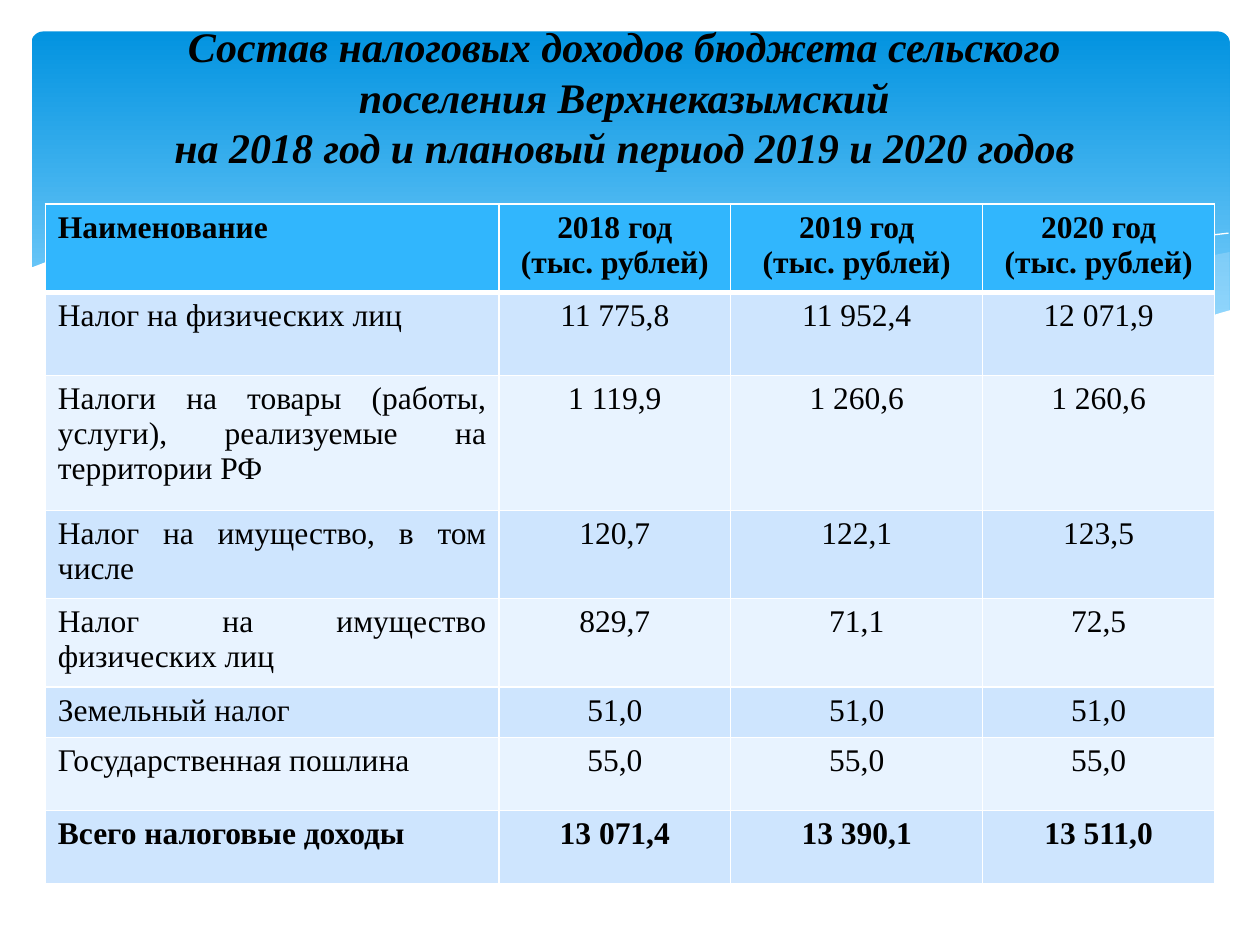
from itertools import chain
from pptx import Presentation
from pptx.util import Inches, Pt
from pptx.dml.color import RGBColor as RGB
from pptx.enum.shapes import MSO_SHAPE as SHAPE
from pptx.enum.text import PP_ALIGN as ALIGN, MSO_ANCHOR as ANCHOR
from pptx.oxml.ns import qn
from lxml.etree import SubElement as Sub

BLACK = RGB(0, 0, 0)
WHITE = RGB(255, 255, 255)
DEEP = RGB(0x02, 0x93, 0xE0)
SKY = RGB(0x83, 0xD3, 0xFE)
MIST = RGB(0xC6, 0xE7, 0xFC)
HEAD = RGB(0x31, 0xB6, 0xFD)
BANDS = (RGB(0xCE, 0xE5, 0xFE), RGB(0xE8, 0xF3, 0xFF))
FONT = "Times New Roman"
STEPS = 8  # line segments between two knots of a curve

# Each edge is a smooth curve through a few knots, in inches
RIGHT_TOP = [(9.76, 2), (8.61, 2.23), (7.53, 2.48), (6.61, 2.65)]
RIGHT_LOW = [(6.61, 2.65), (7.57, 2.76), (8.54, 2.76), (9.76, 2.47)]
MID_TOP = [(8.93, 2.73), (7.41, 2.47), (6.29, 2.22), (4.89, 1.94),
           (3.8, 1.85), (2.86, 1.91)]
MID_LOW = [(2.86, 1.91), (4.49, 2.22), (6.01, 2.55), (7.48, 2.76), (8.93, 2.73)]
CREST = [(3.09, 1.95), (4.16, 1.87), (5.56, 1.97), (7.27, 2.26), (9.07, 2.72)]
RISE = [(6.13, 2.57), (7.48, 2.23), (8.66, 1.99), (9.75, 1.85)]
FRONT_TOP = [(0.23, 2.13), (0.85, 1.93), (1.77, 1.84), (3.16, 1.94),
             (4.47, 2.2), (6.03, 2.54), (7.78, 2.76), (8.75, 2.73), (9.77, 2.46)]
FLOOR = [(9.77, 3.29), (0.23, 3.29)]

TITLE = ("Состав налоговых доходов бюджета сельского",
         "поселения Верхнеказымский",
         "на 2018 год и плановый период 2019 и 2020 годов")
UNIT = "(тыс. рублей)"
ROWS = [
    ("Наименование", *(f"{year} год\n{UNIT}" for year in (2018, 2019, 2020))),
    ("Налог на физических лиц", "11 775,8", "11 952,4", "12 071,9"),
    ("Налоги на товары (работы, услуги), реализуемые на территории РФ",
     "1 119,9", "1 260,6", "1 260,6"),
    ("Налог на имущество, в том числе", "120,7", "122,1", "123,5"),
    ("Налог на имущество физических лиц", "829,7", "71,1", "72,5"),
    ("Земельный налог", "51,0", "51,0", "51,0"),
    ("Государственная пошлина", "55,0", "55,0", "55,0"),
    ("Всего налоговые доходы", "13 071,4", "13 390,1", "13 511,0"),
]
WIDTHS = (3.6, 1.84, 2, 1.84)
HEIGHTS = (0.69, 0.66, 1.07, 0.69, 0.69, 0.39, 0.58, 0.58)


def style(para, size, align, bold, italic=False):
    para.alignment = align
    for run in para.runs:
        font = run.font
        font.name, font.size = FONT, Pt(size)
        font.bold, font.italic = bold, italic
        font.color.rgb = BLACK


def blend(a, b, c, d, t):
    """Catmull-Rom value at t between b and c, with neighbours a and d."""
    return b + t / 2 * (c - a + t * (2 * a - 5 * b + 4 * c - d
                                     + t * (3 * (b - c) + d - a)))


def curve(knots):
    """Points of a smooth curve that passes through all the knots."""
    ends = [knots[0], *knots, knots[-1]]
    points = [knots[0]]
    for near in zip(ends, ends[1:], ends[2:], ends[3:]):
        xs, ys = zip(*near)
        points += [(blend(*xs, i / STEPS), blend(*ys, i / STEPS))
                   for i in range(1, STEPS + 1)]
    return points


def trace(slide, box, edges, closed):
    """Join the edges into one outline inside the box."""
    left, top = box[:2]
    points = chain.from_iterable(curve(edge) for edge in edges)
    spots = [(left + Inches(x), top + Inches(y)) for x, y in points]
    pen = slide.shapes.build_freeform(*spots[0])
    pen.add_line_segments(spots[1:], close=closed)
    shape = pen.convert_to_shape()
    shape.shadow.inherit = False
    return shape


def wave(slide, box, edges, color, opaque=100):
    shape = trace(slide, box, edges, True)
    shape.fill.solid()
    shape.fill.fore_color.rgb = color
    shape.line.fill.background()
    tint = shape.element.spPr.find(".//" + qn("a:srgbClr"))
    Sub(tint, qn("a:alpha"), val=str(opaque * 1000))


def thread(slide, box, edge):
    shape = trace(slide, box, [edge], False)
    shape.fill.background()
    shape.line.color.rgb = WHITE
    shape.line.width = Pt(0)


def backdrop(slide, box):
    left, top, width, height = box
    # Blue panel
    panel = slide.shapes.add_shape(
        SHAPE.ROUNDED_RECTANGLE, left + Inches(0.25), top + Inches(0.25),
        width - Inches(0.49), Inches(2.7))
    panel.adjustments[0] = 0.034
    panel.shadow.inherit = False
    panel.line.fill.background()
    panel.fill.gradient()
    panel.fill.gradient_angle = 270
    for stop, color, place in zip(panel.fill.gradient_stops, (DEEP, SKY), (0, 0.9)):
        stop.color.rgb = color
        stop.position = place
    # Waves, from back to front
    wave(slide, box, [RIGHT_TOP, RIGHT_LOW], MIST, opaque=29)
    wave(slide, box, [MID_TOP, MID_LOW], MIST, opaque=40)
    for edge in (CREST, RISE):
        thread(slide, box, edge)
    wave(slide, box, [FRONT_TOP, FLOOR], WHITE)


def title(slide, box):
    frame = slide.shapes.add_textbox(*box).text_frame
    frame.word_wrap = True
    frame.vertical_anchor = ANCHOR.MIDDLE
    frame.margin_right = Inches(0.18)
    frame.margin_bottom = Inches(0.42)
    frame.text = "\n".join(TITLE)
    for para in frame.paragraphs:
        style(para, 24, ALIGN.CENTER, True, italic=True)


def border(cell, side, points):
    edge = Sub(cell._tc.get_or_add_tcPr(), qn("a:ln" + side), w=str(Pt(points)))
    Sub(Sub(edge, qn("a:solidFill")), qn("a:srgbClr"), val=str(WHITE))


def taxes(slide, box):
    table = slide.shapes.add_table(len(ROWS), len(WIDTHS), *box).table
    for col, width in zip(table.columns, WIDTHS):
        col.width = Inches(width)
    for row, height in zip(table.rows, HEIGHTS):
        row.height = Inches(height)
    last = len(ROWS) - 1
    for i, texts in enumerate(ROWS):
        first = ALIGN.JUSTIFY if i else ALIGN.LEFT
        for j, text in enumerate(texts):
            cell = table.cell(i, j)
            # A thick rule parts the head from the body
            for side in "LRTB":
                thick = (i, side) in ((0, "B"), (1, "T"))
                border(cell, side, 3 if thick else 1)
            cell.fill.solid()
            cell.fill.fore_color.rgb = BANDS[(i - 1) % 2] if i else HEAD
            cell.text_frame.text = text
            for para in cell.text_frame.paragraphs:
                style(para, 18, ALIGN.CENTER if j else first, i in (0, last))


def main():
    deck = Presentation()
    deck.slide_width, deck.slide_height = Inches(10), Inches(7.5)
    slide = deck.slides.add_slide(deck.slide_layouts[6])
    backdrop(slide, (0, 0, deck.slide_width, deck.slide_height))
    title(slide, (Inches(0.5), Inches(0.36), Inches(8.99), Inches(1.18)))
    taxes(slide, (Inches(0.36), Inches(1.62),
                  Inches(sum(WIDTHS)), Inches(sum(HEIGHTS))))
    deck.save("out.pptx")


if __name__ == "__main__":
    main()
